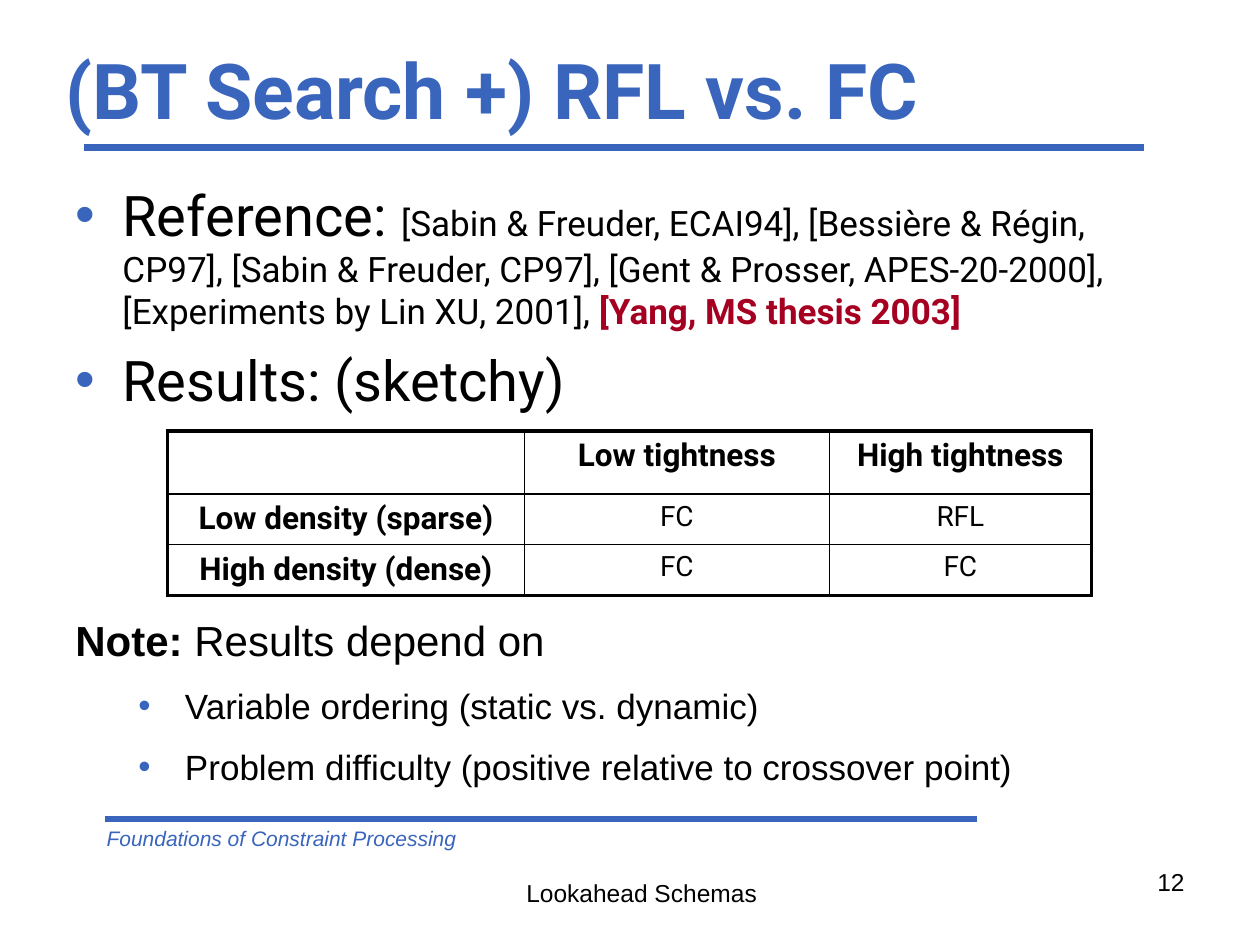
from lxml import etree
from pptx import Presentation
from pptx import util as u
from pptx.dml.color import RGBColor
from pptx.enum import shapes, text
from pptx.oxml import ns

COLORS = {"blue": "3A65BC", "black": "000000", "crimson": "A50021"}
THICK, THIN = 2.25, 1


def add_xml(parent, tag, **attributes):
    return etree.SubElement(parent, ns.qn(tag), attributes)


def add_rule(slide, left, right, y):
    rule = slide.shapes.add_connector(
        shapes.MSO_CONNECTOR.STRAIGHT, u.Cm(left), u.Cm(y), u.Cm(right), u.Cm(y))
    rule.line.color.rgb = RGBColor.from_string(COLORS["blue"])
    rule.line.width = u.Pt(4)
    add_xml(rule._element.spPr, "a:effectLst")


def add_run(paragraph, wording, size, font="Arial", color="black", **formats):
    run = paragraph.add_run()
    run.text = wording
    formats = {"name": font, "size": u.Pt(size), **formats}
    for key, value in formats.items():
        setattr(run.font, key, value)
    run.font.color.rgb = RGBColor.from_string(COLORS[color])


def add_bullet(paragraph, margin, hanging):
    properties = paragraph._p.get_or_add_pPr()
    properties.set("marL", str(u.Cm(margin)))
    properties.set("indent", str(u.Cm(-hanging)))
    add_xml(add_xml(properties, "a:buClr"), "a:srgbClr", val=COLORS["blue"])
    add_xml(properties, "a:buFont", typeface="Arial")
    add_xml(properties, "a:buChar", char="•")


def add_text(slide, box, paragraphs, wrap=True, anchor=text.MSO_ANCHOR.TOP):
    frame = slide.shapes.add_textbox(*map(u.Cm, box)).text_frame
    frame.word_wrap = wrap
    frame.vertical_anchor = anchor
    for index, (runs, bullet, formats) in enumerate(paragraphs):
        paragraph = frame.add_paragraph() if index else frame.paragraphs[0]
        if bullet:
            add_bullet(paragraph, *bullet)
        for key, value in formats.items():
            setattr(paragraph, key, value)
        for wording, run_formats in runs:
            add_run(paragraph, wording, **run_formats)


def add_line(slide, box, wording, run_formats, align=text.PP_ALIGN.LEFT, **frame_formats):
    add_text(slide, box, [([(wording, run_formats)], None, {"alignment": align})],
             **frame_formats)


def set_borders(cell, widths):
    properties = cell._tc.get_or_add_tcPr()
    for index, (side, width) in enumerate(zip("LRTB", widths)):
        border = etree.Element(ns.qn(f"a:ln{side}"), w=str(u.Pt(width)))
        add_xml(add_xml(border, "a:solidFill"), "a:srgbClr", val=COLORS["black"])
        properties.insert(index, border)


def add_results_table(slide, left, top, widths, heights, results):
    table = slide.shapes.add_table(
        len(heights), len(widths), u.Cm(left), u.Cm(top),
        u.Cm(sum(widths)), u.Cm(sum(heights))).table
    for column, width in zip(table.columns, widths):
        column.width = u.Cm(width)
    for row, height in zip(table.rows, heights):
        row.height = u.Cm(height)
    last_row, last_column = len(heights) - 1, len(widths) - 1
    for r, row in enumerate(results):
        for c, wording in enumerate(row):
            cell = table.cell(r, c)
            cell.fill.background()
            outer = (c == 0, c == last_column, r == 0, r == last_row)
            set_borders(cell, [THICK if edge else THIN for edge in outer])
            if wording:
                heading = r == 0 or c == 0
                paragraph = cell.text_frame.paragraphs[0]
                paragraph.alignment = text.PP_ALIGN.CENTER
                add_run(paragraph, wording, 18 if heading else 16, "Roboto", bold=heading)


def main():
    deck = Presentation()
    deck.slide_width, deck.slide_height = u.Cm(25.4), u.Cm(19.05)
    slide = deck.slides.add_slide(deck.slide_layouts[6])

    add_rule(slide, 1.7, 23.06, 2.97)
    add_rule(slide, 2.11, 19.69, 16.51)
    add_line(slide, (1.9, 16.51, 13.34, 0.76), "Foundations of Constraint Processing",
             {"size": 12, "color": "blue", "italic": True})
    add_line(slide, (10.36, 17.58, 5.18, 0.86), "Lookahead Schemas", {"size": 14}, wrap=False)
    add_line(slide, (18.21, 17.35, 5.92, 1.32), "12", {"size": 14}, text.PP_ALIGN.RIGHT)
    add_line(slide, (1.07, 0.84, 22.86, 1.9), "(BT Search +) RFL vs. FC",
             {"size": 44, "font": "Roboto", "color": "blue", "bold": True},
             anchor=text.MSO_ANCHOR.MIDDLE)

    topic = {"size": 32, "font": "Roboto"}
    citation = {"size": 20, "font": "Roboto"}
    topic_bullet = (0.95, 0.95)
    add_text(slide, (1.27, 3.51, 22.86, 12.57), [
        ([("Reference: ", topic),
          ("[Sabin & Freuder, ECAI94], [Bessière & Régin, CP97], "
           "[Sabin & Freuder, CP97], [Gent & Prosser, APES-20-2000], "
           "[Experiments by Lin XU, 2001], ", citation),
          ("[Yang, MS thesis 2003]", {**citation, "color": "crimson", "bold": True})],
         topic_bullet, {}),
        ([("Results: (sketchy)", topic)], topic_bullet, {"space_before": u.Pt(8)}),
    ])

    add_results_table(slide, 3.38, 8.69, (7.19, 6.15, 5.28), (1.27, 1.02, 1.02), [
        ("", "Low tightness", "High tightness"),
        ("Low density (sparse)", "FC", "RFL"),
        ("High density (dense)", "FC", "FC"),
    ])

    factors = ("Variable ordering (static vs. dynamic)",
               "Problem difficulty (positive relative to crossover point)")
    note = [([("Note: ", {"size": 24, "bold": True}),
              ("Results depend on", {"size": 24})], None, {})]
    note += [([(factor, {"size": 20})], (2.21, 0.94),
              {"level": 1, "space_before": u.Pt(11)}) for factor in factors]
    add_text(slide, (1.27, 12.27, 21.39, 3.81), note)

    deck.save("out.pptx")


if __name__ == "__main__":
    main()
